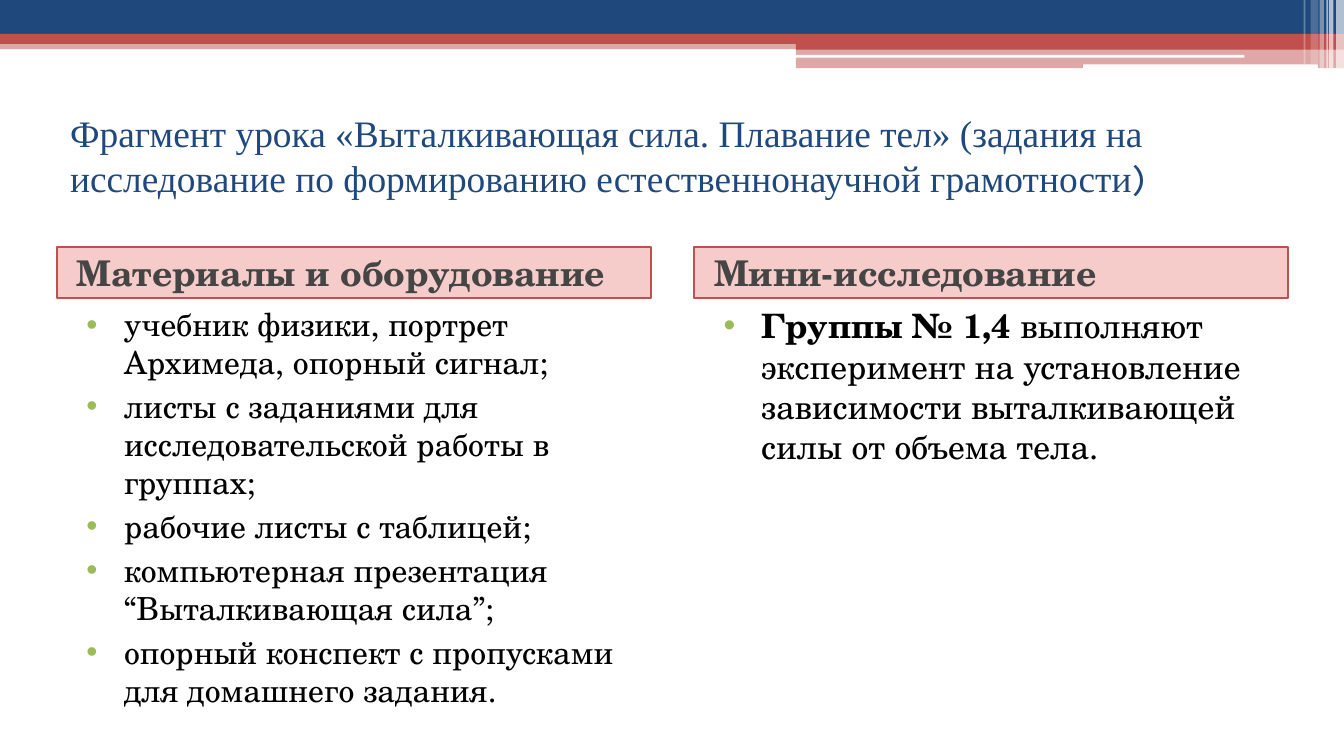
"""Build the lesson slide on buoyant force."""
import collections
import dataclasses

import pptx
import pptx.dml.color
import pptx.enum.shapes
import pptx.enum.text
import pptx.oxml
import pptx.oxml.ns
import pptx.util

Cm = pptx.util.Cm
Pt = pptx.util.Pt
RGBColor = pptx.dml.color.RGBColor
MSO_SHAPE = pptx.enum.shapes.MSO_SHAPE
MSO_ANCHOR = pptx.enum.text.MSO_ANCHOR
Box = collections.namedtuple("Box", "left top width height")


@dataclasses.dataclass(frozen=True)
class Theme:
    """Colours, fonts and type sizes of the slide."""
    navy: str = "1F497D"
    red: str = "C0504D"
    white: str = "FFFFFF"
    tint: str = "DD3530"
    heading: str = "454545"
    text: str = "000000"
    bullet: str = "9BBB59"
    title_font: str = "Times New Roman"
    bracket_font: str = "Karla"
    body_font: str = "TeX Gyre Schola"
    title_size: int = 20
    heading_size: int = 19
    list_size: int = 17
    task_size: int = 18


THEME = Theme()
TITLE = [
    ("Фрагмент урока «Выталкивающая сила. Плавание тел» (задания на "
     "исследование по формированию естественнонаучной грамотности", THEME.title_font),
    (")", THEME.bracket_font),
]
MATERIALS = [
    [("учебник физики, портрет Архимеда, опорный сигнал;", False)],
    [("листы с заданиями для исследовательской работы в группах;", False)],
    [("рабочие листы с таблицей;", False)],
    [("компьютерная презентация “Выталкивающая сила”;", False)],
    [("опорный конспект с пропусками для домашнего задания.", False)],
]
TASKS = [[
    ("Группы № 1,4", True),
    (" выполняют эксперимент на установление зависимости "
     "выталкивающей силы от объема тела.", False),
]]


def apply_format(target, values):
    """Set each attribute named in values on the target."""
    for name, value in values.items():
        setattr(target, name, value)


def place(shape, box):
    """Put a shape into a box given in centimetres."""
    apply_format(shape, {name: Cm(value) for name, value in box._asdict().items()})


def fill_shape(shape, color, opacity=100):
    """Fill a shape with a solid colour at the given opacity."""
    shape.fill.solid()
    shape.fill.fore_color.rgb = RGBColor.from_string(color)
    if opacity < 100:
        color_element = shape.fill._xPr.find(".//" + pptx.oxml.ns.qn("a:srgbClr"))
        alpha = pptx.oxml.parse_xml(
            f'<a:alpha {pptx.oxml.ns.nsdecls("a")} val="{opacity * 1000}"/>')
        color_element.append(alpha)


def add_run(paragraph, text, color, **values):
    """Add a run of text with its font values."""
    run = paragraph.add_run()
    run.text = text
    apply_format(run.font, values)
    run.font.color.rgb = RGBColor.from_string(color)


def prepare_frame(shape, box, anchor):
    """Place a placeholder and return its text frame."""
    place(shape, box)
    apply_format(shape.text_frame, {
        "word_wrap": True,
        "auto_size": pptx.enum.text.MSO_AUTO_SIZE.NONE,
        "vertical_anchor": anchor,
    })
    return shape.text_frame


def set_indent(paragraph, margin, indent=0):
    """Set the left margin and first-line indent in centimetres."""
    properties = paragraph._p.get_or_add_pPr()
    properties.set("marL", str(Cm(margin)))
    properties.set("indent", str(Cm(indent)))
    return properties


def add_bullet(paragraph):
    """Give a paragraph a coloured hanging bullet."""
    properties = set_indent(paragraph, 1.02, -0.71)
    namespace = pptx.oxml.ns.nsdecls("a")
    for markup in (
        f'<a:buClr {namespace}><a:srgbClr val="{THEME.bullet}"/></a:buClr>',
        f'<a:buFont {namespace} typeface="Arial"/>',
        f'<a:buChar {namespace} char="•"/>',
    ):
        properties.append(pptx.oxml.parse_xml(markup))


def build_banner(slide, box):
    """Draw the bands and the fading right-hand stripes of the banner."""
    right = box.left + box.width
    step = right - 10.36
    rectangle, rounded = MSO_SHAPE.RECTANGLE, MSO_SHAPE.ROUNDED_RECTANGLE
    parts = [
        (rectangle, Box(box.left, 0.76, box.width, 0.17), THEME.red, 50),
        (rectangle, Box(box.left, 0, box.width, 0.64), THEME.navy, 100),
        (rectangle, Box(box.left, 0.64, box.width, 0.19), THEME.red, 100),
        (rectangle, Box(step, 0.76, 10.36, 0.18), THEME.red, 100),
        (rectangle, Box(step, 0.92, 10.36, 0.37), THEME.red, 50),
        (rounded, Box(step - 0.03, 1.04, 8.51, 0.05), THEME.white, 100),
        (rounded, Box(right - 4.93, 1.22, 4.44, 0.08), THEME.white, 100),
    ]
    stripes = [
        (0.15, 0.15, 1, 65), (0.28, 0.08, 1, 65), (0.33, 0.03, 1, 60),
        (0.46, 0.08, 1, 40), (0.63, 0.15, 0.94, 20), (0.76, 0.03, 0.94, 30),
    ]
    parts += [
        (rectangle, Box(right - offset, 0, width, share * box.height), THEME.white, opacity)
        for offset, width, share, opacity in stripes
    ]
    for kind, part, color, opacity in parts:
        shape = slide.shapes.add_shape(kind, 0, 0, 0, 0)
        place(shape, part._replace(top=box.top + part.top))
        fill_shape(shape, color, opacity)
        shape.line.fill.background()
        shape.shadow.inherit = False


def build_title(shape, box):
    """Write the slide title."""
    paragraph = prepare_frame(shape, box, MSO_ANCHOR.MIDDLE).paragraphs[0]
    paragraph.alignment = pptx.enum.text.PP_ALIGN.LEFT
    for text, font in TITLE:
        add_run(paragraph, text, THEME.navy, name=font, size=Pt(THEME.title_size))


def build_column(heading_shape, list_shape, box, heading, items, size):
    """Write a framed heading with a bulleted list under it."""
    heading_height = 0.97
    frame = prepare_frame(
        heading_shape, box._replace(height=heading_height), MSO_ANCHOR.MIDDLE)
    fill_shape(heading_shape, THEME.tint, 25)
    heading_shape.line.color.rgb = RGBColor.from_string(THEME.red)
    heading_shape.line.width = Pt(1)
    paragraph = frame.paragraphs[0]
    set_indent(paragraph, 0.13)
    paragraph.space_before = Pt(0)
    add_run(paragraph, heading, THEME.heading, name=THEME.body_font,
            size=Pt(THEME.heading_size), bold=True)

    list_box = box._replace(
        top=box.top + heading_height, height=box.height - heading_height)
    frame = prepare_frame(list_shape, list_box, MSO_ANCHOR.TOP)
    for index, runs in enumerate(items):
        paragraph = frame.add_paragraph() if index else frame.paragraphs[0]
        add_bullet(paragraph)
        paragraph.space_before = Pt(3 if index else 0)
        for text, bold in runs:
            add_run(paragraph, text, THEME.text, name=THEME.body_font,
                    size=Pt(size), bold=bold)


def main():
    """Build and save the presentation."""
    presentation = pptx.Presentation()
    apply_format(presentation, {"slide_width": Cm(25.4), "slide_height": Cm(14.29)})
    slide = presentation.slides.add_slide(presentation.slide_layouts[4])
    title, *columns = slide.placeholders
    margin, gap, width = 1.07, 0.81, 11.23
    build_banner(slide, Box(0, 0, 25.4, 1.29))
    build_title(title, Box(margin, 1.78, 2 * width + gap, 2.29))
    contents = [
        ("Материалы и оборудование", MATERIALS, THEME.list_size),
        ("Мини-исследование", TASKS, THEME.task_size),
    ]
    for index, content in enumerate(contents):
        box = Box(margin + index * (width + gap), 4.67, width, 9.07)
        build_column(*columns[2 * index:2 * index + 2], box, *content)
    presentation.save("out.pptx")


if __name__ == "__main__":
    main()
